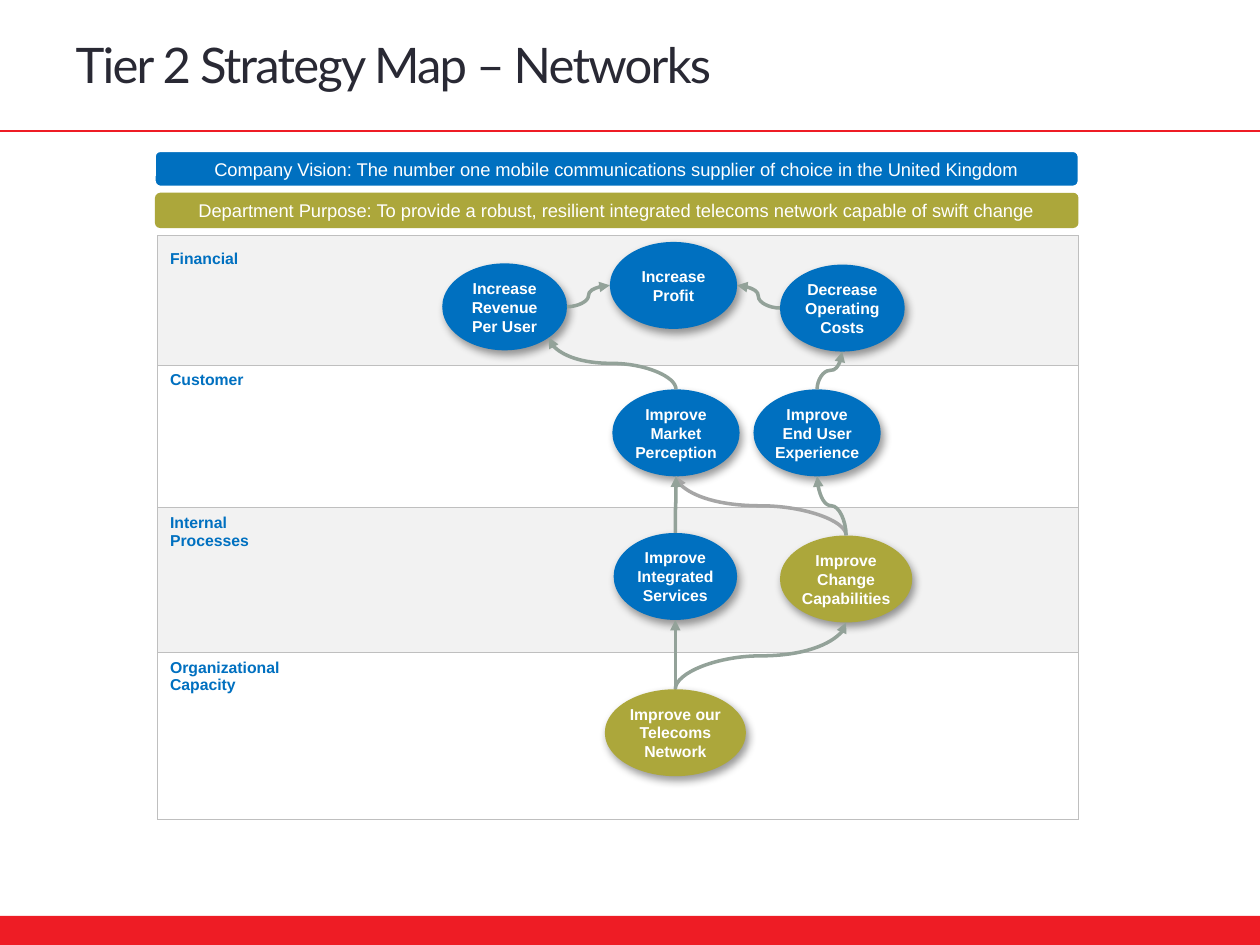
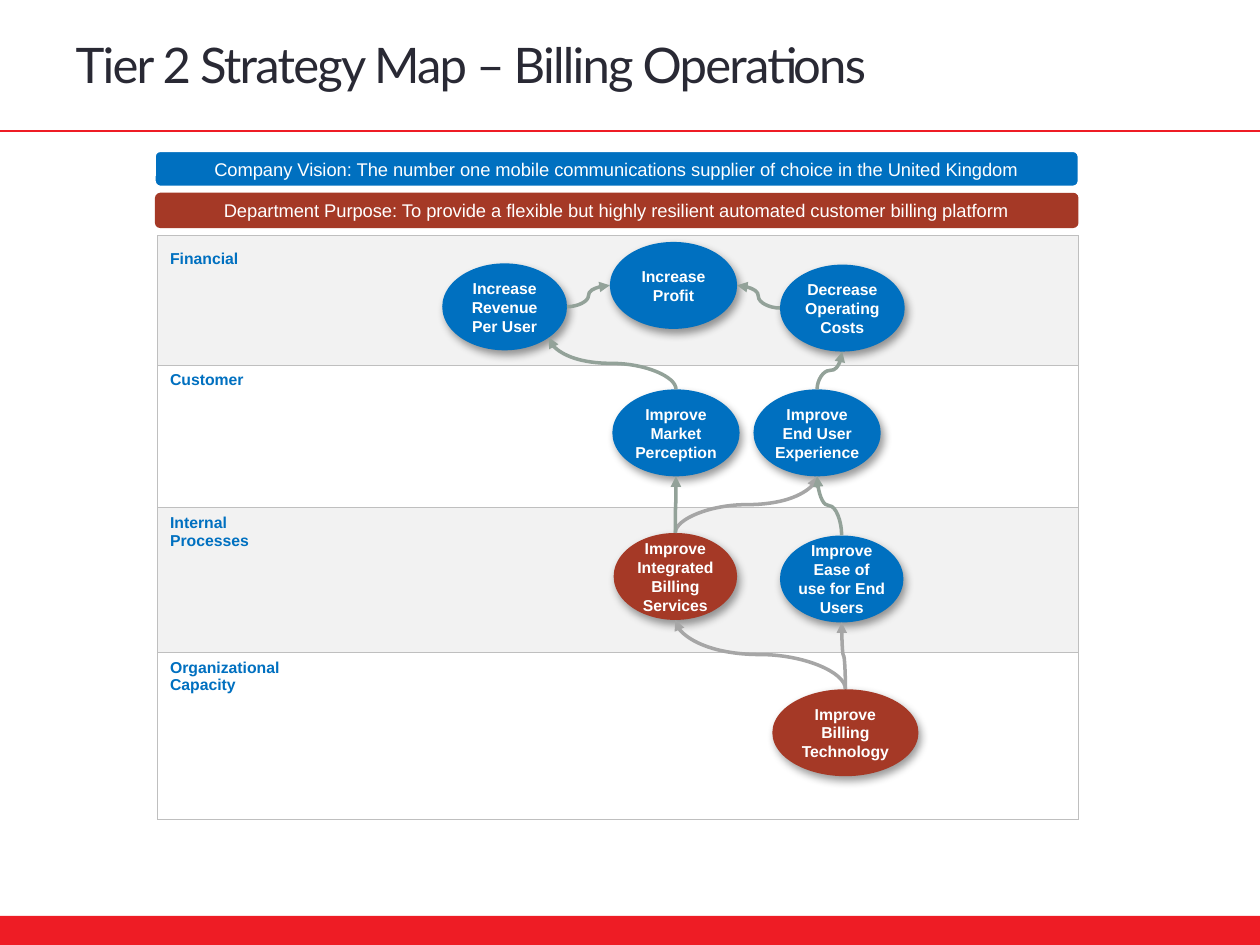
import math

import pptx
import pptx.util
import pptx.dml.color
import pptx.enum.shapes
import pptx.enum.text
import pptx.oxml
import pptx.oxml.ns

Inches = pptx.util.Inches
Pt = pptx.util.Pt
RGB = pptx.dml.color.RGBColor
SHAPE = pptx.enum.shapes.MSO_SHAPE
LINK = pptx.enum.shapes.MSO_CONNECTOR
ALIGN = pptx.enum.text.PP_ALIGN
MIDDLE = pptx.enum.text.MSO_ANCHOR.MIDDLE
NS = pptx.oxml.ns.nsdecls("a")

RED = RGB(0xEE, 0x1C, 0x25)
BLUE = RGB(0x00, 0x70, 0xC0)
OLIVE = RGB(0xAC, 0xA7, 0x3B)
RUST = RGB(0xA5, 0x39, 0x26)
INK = RGB(0x29, 0x29, 0x34)
WHITE = RGB(0xFF, 0xFF, 0xFF)
PALE = RGB(0xF2, 0xF2, 0xF2)
GREY = RGB(0xA6, 0xA6, 0xA6)
SAGE = RGB(0x93, 0xA2, 0x99)

VISION = ("Company Vision: The number one mobile communications supplier "
          "of choice in the United Kingdom")
LAYERS = [("Financial", 1.03), ("Customer", 1.13),
          ("Internal\nProcesses", 1.15), ("Organizational\nCapacity", 1.32)]

# Goal: (text, left, top, width, fill)
MONEY = {
    "revenue": ("Increase Revenue Per User", 3.51, 2.09, 0.99, BLUE),
    "profit": ("Increase Profit", 4.84, 1.92, 1.01, BLUE),
    "costs": ("Decrease Operating Costs", 6.19, 2.1, 0.99, BLUE),
}
CLIENT = {
    "market": ("Improve Market Perception", 4.86, 3.09, 1.01, BLUE),
    "user": ("Improve End User Experience", 5.98, 3.09, 1.01, BLUE),
}

# Places on an oval's edge, in degrees clockwise from the right
RIGHT, CORNER, BOTTOM, LEFT, TOP = 0, 45, 90, 180, 270

# Link: (start goal, start edge, end goal, end edge, colour)
SHARED = [
    ("user", TOP, "costs", BOTTOM, SAGE),
    ("market", TOP, "revenue", CORNER, SAGE),
    ("revenue", RIGHT, "profit", LEFT, SAGE),
    ("costs", LEFT, "profit", RIGHT, SAGE),
]


def rise(start, end, color=SAGE):
    return start, TOP, end, BOTTOM, color


MAPS = [
    dict(
        title="Tier 2 Strategy Map – Networks",
        purpose="Department Purpose: To provide a robust, resilient integrated "
                "telecoms network capable of swift change",
        tint=OLIVE,
        goals={
            "network": ("Improve our Telecoms Network", 4.8, 5.47, 1.12, OLIVE),
            "service": ("Improve Integrated Services", 4.87, 4.23, 0.98, BLUE),
            "change": ("Improve Change Capabilities", 6.19, 4.25, 1.05, OLIVE),
        },
        under=[rise("change", "market", GREY), rise("service", "market")],
        over=[rise("change", "user"), rise("network", "service"),
              rise("network", "change")],
    ),
    dict(
        title="Tier 2 Strategy Map – Billing Operations",
        purpose="Department Purpose: To provide a flexible but highly resilient "
                "automated customer billing platform",
        tint=RUST,
        goals={
            "service": ("Improve Integrated\nBilling Services", 4.87, 4.23, 0.98, RUST),
            "ease": ("Improve Ease of use for End Users", 6.19, 4.25, 0.98, BLUE),
            "billing": ("Improve\nBilling Technology", 6.13, 5.47, 1.16, RUST),
        },
        under=[rise("service", "user", GREY), rise("service", "market")],
        over=[rise("ease", "user"), rise("billing", "ease", GREY),
              rise("billing", "service", GREY)],
    ),
]


class Deck:
    def __init__(self):
        self.prs = pptx.Presentation()
        self.prs.slide_width, self.prs.slide_height = Inches(10), Inches(7.5)
        self.slide = None
        self.goals = {}

    def style(self, frame, size, color, bold=False, align=None, font="Arial"):
        frame.word_wrap = True
        for para in frame.paragraphs:
            para.alignment = align
            for run in para.runs:
                run.font.name, run.font.size = font, Pt(size)
                run.font.bold, run.font.color.rgb = bold, color

    def page(self, title):
        self.slide = self.prs.slides.add_slide(self.prs.slide_layouts[5])
        self.goals = {}
        self.shape(SHAPE.RECTANGLE, 0, 7.27, 10, 0.24, RED)
        self.line(LINK.STRAIGHT, (0, Inches(1.04)), (Inches(10), Inches(1.04)), RED, 1.5)
        head = self.slide.shapes.title
        head.left, head.top = Inches(0.5), Inches(0.15)
        head.width, head.height = Inches(6.94), Inches(0.72)
        frame = head.text_frame
        frame.text = title
        frame.auto_size = pptx.enum.text.MSO_AUTO_SIZE.NONE
        frame.vertical_anchor = MIDDLE
        frame.margin_top = frame.margin_bottom = 0
        self.style(frame, 28, INK, align=ALIGN.LEFT, font="Lato")
        for run in frame.paragraphs[0].runs:
            run.font._element.set("spc", "-100")

    def shape(self, kind, left, top, width, height, fill):
        item = self.slide.shapes.add_shape(
            kind, Inches(left), Inches(top), Inches(width), Inches(height))
        item.shadow.inherit = False
        item.fill.solid()
        item.fill.fore_color.rgb = fill
        item.line.fill.background()
        return item

    def line(self, kind, start, end, color, width):
        item = self.slide.shapes.add_connector(kind, *map(int, (*start, *end)))
        item.line.color.rgb, item.line.width = color, Pt(width)
        item._element.spPr.append(pptx.oxml.parse_xml(f"<a:effectLst {NS}/>"))
        return item

    def banner(self, text, top, fill):
        bar = self.shape(SHAPE.ROUNDED_RECTANGLE, 1.23, top, 7.33, 0.28, fill)
        bar.adjustments[0] = 0.15
        bar.text_frame.text = text
        bar.text_frame.vertical_anchor = MIDDLE
        self.style(bar.text_frame, 10.5, WHITE, align=ALIGN.CENTER)
        return bar

    def layers(self):
        total = sum(height for _, height in LAYERS)
        grid = self.slide.shapes.add_table(
            len(LAYERS), 1, Inches(1.25), Inches(1.87), Inches(7.31), Inches(total)).table
        grid.first_row = grid.horz_banding = False
        for i, (name, height) in enumerate(LAYERS):
            grid.rows[i].height = Inches(height)
            cell = grid.cell(i, 0)
            cell.text_frame.paragraphs[0].text = name
            self.style(cell.text_frame, 9, BLUE, bold=True)
            if i == 0:
                cell.margin_top = Inches(0.12)
            self.frame(cell)
            cell.fill.solid()
            cell.fill.fore_color.rgb = WHITE if i % 2 else PALE

    def frame(self, cell):
        """Give a table cell thin grey borders."""
        props = cell._tc.get_or_add_tcPr()
        for side in "LRTB":
            props.append(pptx.oxml.parse_xml(
                f'<a:ln{side} {NS} w="6350"><a:solidFill><a:srgbClr val="BFBFBF"/>'
                f'</a:solidFill></a:ln{side}>'))

    def oval(self, key, text, left, top, width, fill):
        item = self.shape(SHAPE.OVAL, left, top, width, 0.69, fill)
        effect = item._element.spPr.find(pptx.oxml.ns.qn("a:effectLst"))
        effect.append(pptx.oxml.parse_xml(
            f'<a:outerShdw {NS} blurRad="63500" dist="38100" dir="3600000" '
            'algn="tl" rotWithShape="0"><a:srgbClr val="000000">'
            '<a:alpha val="40000"/></a:srgbClr></a:outerShdw>'))
        frame = item.text_frame
        frame.text = text
        frame.vertical_anchor = MIDDLE
        frame.margin_left = frame.margin_right = 0
        frame.margin_top = frame.margin_bottom = 0
        self.style(frame, 9, WHITE, bold=True, align=ALIGN.CENTER)
        self.goals[key] = item

    def ovals(self, goals):
        for key, goal in goals.items():
            self.oval(key, *goal)

    def edge(self, key, angle):
        """Return the point of a goal's outline at an angle."""
        item, turn = self.goals[key], math.radians(angle)
        return (item.left + item.width / 2 * (1 + math.cos(turn)),
                item.top + item.height / 2 * (1 + math.sin(turn)))

    def link(self, start, leave, end, enter, color):
        a, b = self.edge(start, leave), self.edge(end, enter)
        item = self.line(LINK.CURVE, a, b, color, 2)
        if leave == TOP:
            self.upright(item, a, b)
        item.line._get_or_add_ln().append(
            pptx.oxml.parse_xml(f'<a:tailEnd {NS} type="triangle"/>'))

    def upright(self, item, a, b):
        """Turn a curve so that it leaves its start straight upwards."""
        across, up = abs(b[0] - a[0]), a[1] - b[1]
        item.left = int((a[0] + b[0] - up) / 2)
        item.top = int((a[1] + b[1] - across) / 2)
        item.width, item.height = int(up), int(across)
        turn = item._element.spPr.xfrm
        turn.set("rot", str(270 * 60000))
        turn.set("flipH", "0")
        turn.set("flipV", "1" if b[0] < a[0] else "0")

    def links(self, rows):
        for row in rows:
            self.link(*row)

    def chart(self, title, purpose, tint, goals, under, over):
        """Build one strategy map."""
        self.page(title)
        self.layers()
        vision = self.banner(VISION, 1.2, BLUE)
        vision.line.color.rgb, vision.line.width = WHITE, Pt(1)
        self.banner(purpose, 1.53, tint)
        self.ovals(MONEY | goals)
        # Links that touch the customer goals from behind need their places first
        self.ovals(CLIENT)
        self.links(under + SHARED + over)


def main():
    deck = Deck()
    for plan in MAPS:
        deck.chart(**plan)
    deck.prs.save("out.pptx")


if __name__ == "__main__":
    main()
